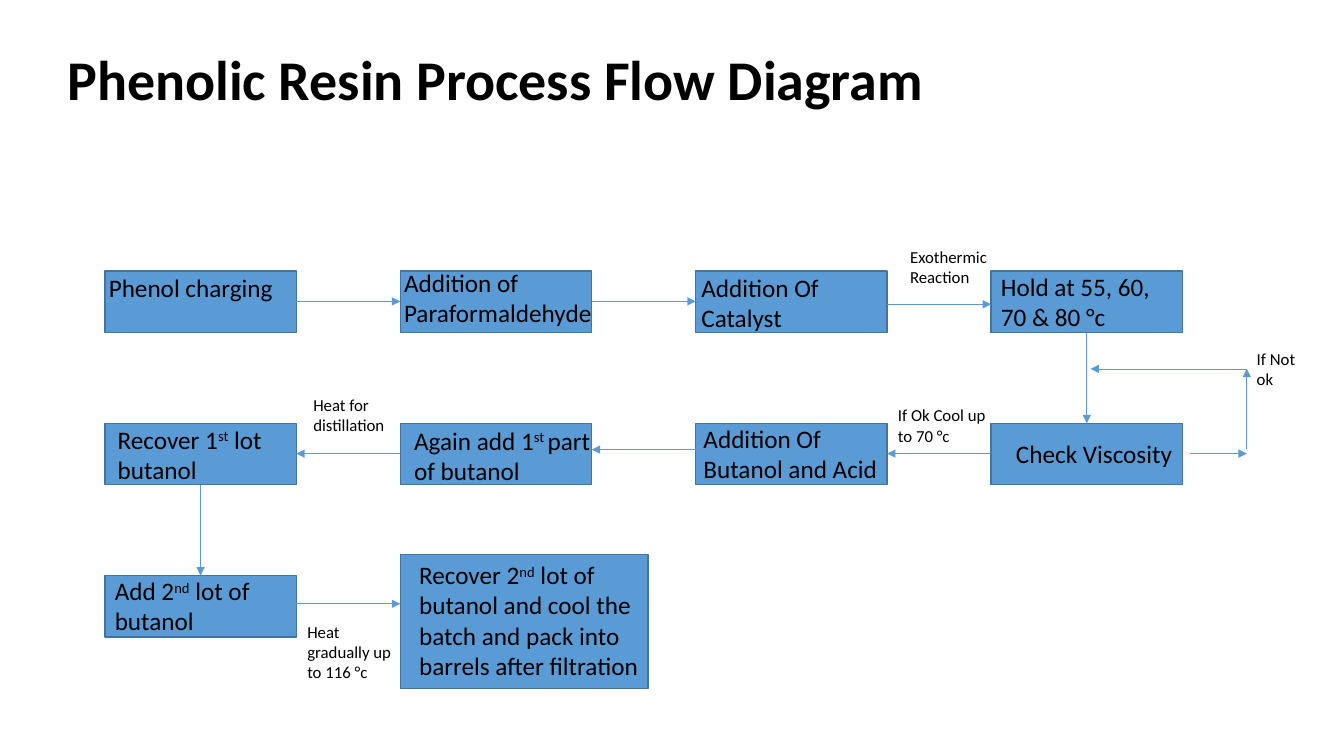
from lxml.etree import SubElement
from pptx import Presentation
from pptx.dml.color import RGBColor
from pptx.enum.shapes import MSO_CONNECTOR, MSO_SHAPE
from pptx.enum.text import MSO_ANCHOR, MSO_AUTO_SIZE, PP_ALIGN
from pptx.oxml.ns import qn
from pptx.util import Pt

HUES = {"box": "5B9BD5", "edge": "43739E", "text": "000000", "halo": "FFFFFF"}
WIDE, HIGH = 136.8, 43.9
COLS = [74.9 + 211 * i for i in range(4)]
ROWS = [193.7 + 108.7 * i for i in range(3)]
ENDS = [x + WIDE for x in COLS]
MIDS = [x + WIDE / 2 for x in COLS]
LOOP = 890.6


def hue(name):
    return RGBColor.from_string(HUES[name])


def write(frame, text, size=18, bold=False, font="Calibri"):
    frame.word_wrap = True
    frame.auto_size = MSO_AUTO_SIZE.SHAPE_TO_FIT_TEXT
    frame.vertical_anchor = MSO_ANCHOR.TOP
    para = frame.paragraphs[0]
    para.alignment = PP_ALIGN.LEFT
    for i, part in enumerate(text.split("^")):
        run = para.add_run()
        run.text = part
        run.font.name = font
        run.font.size = Pt(size)
        run.font.bold = bold
        run.font.color.rgb = hue("text")
        if i % 2:
            run.font._element.set("baseline", "30000")
    return para


class Chart:
    def __init__(self, deck):
        self.slide = deck.slides.add_slide(deck.slide_layouts[5])
        self.shapes = self.slide.shapes

    def title(self, text, x, y, w, h):
        head = self.shapes.title
        head.left, head.top, head.width, head.height = map(Pt, (x, y, w, h))
        para = write(head.text_frame, text, size=40, bold=True)
        for run in para.runs:
            props = run.font._element
            line = SubElement(props, qn("a:ln"), w=str(Pt(0.75)))
            fill = SubElement(line, qn("a:solidFill"))
            SubElement(fill, qn("a:srgbClr"), val=HUES["halo"])
            props.insert(0, line)

    def box(self, x, y, w=WIDE, h=HIGH):
        shape = self.shapes.add_shape(MSO_SHAPE.RECTANGLE, *map(Pt, (x, y, w, h)))
        shape.shadow.inherit = False
        shape.fill.solid()
        shape.fill.fore_color.rgb = hue("box")
        shape.line.color.rgb = hue("edge")
        shape.line.width = Pt(1)

    def arrow(self, *ends):
        link = self.shapes.add_connector(MSO_CONNECTOR.STRAIGHT, *map(Pt, ends))
        link.line.color.rgb = hue("box")
        link.line.width = Pt(0.5)
        props = link._element.spPr
        SubElement(props.find(qn("a:ln")), qn("a:tailEnd"), type="triangle")
        SubElement(props, qn("a:effectLst"))

    def label(self, text, x, y, w, h, **style):
        area = self.shapes.add_textbox(*map(Pt, (x, y, w, h)))
        write(area.text_frame, text, **style)


STEPS = [
    ("Phenol charging", 70.6, 190.8, 142.6, 29),
    ("Addition of Paraformaldehyde", 281.5, 187.2, 159.1, 51),
    ("Addition Of Catalyst", 493.9, 190.8, 148.3, 51),
    ("Hold at 55, 60, 70 & 80 °c", 707.8, 190.1, 142.6, 51),
    ("Check Viscosity", 718.6, 309.6, 142.6, 29),
    ("Addition Of Butanol and Acid", 495.4, 298.8, 142.6, 51),
    ("Again add 1^st ^part of butanol", 288.7, 300.2, 142.6, 51),
    ("Recover 1^st^ lot butanol", 77, 299.5, 144.7, 51),
    ("Add 2^nd^ lot of butanol", 74.9, 407.5, 142.6, 51),
    ("Recover 2^nd^ lot of butanol and cool the batch and pack into "
     "barrels after filtration", 292.3, 396, 173.5, 94.3),
]
NOTES = [
    ("Exothermic Reaction", 643, 172.8, 86.4, 36),
    ("If Ok Cool up to 70 °c", 634.3, 285.8, 85, 51),
    ("If Not ok", LOOP, 245.5, 54, 36),
    ("Heat for distillation", 216.7, 278.6, 71.3, 36),
    ("Heat gradually up to 116 °c", 212.4, 440.6, 78.5, 51),
]
LINKS = [
    (ENDS[0], 215.3, COLS[1], 215.3),
    (ENDS[1], 215.3, COLS[2], 215.3),
    (ENDS[2], 217.4, COLS[3], 217.4),
    (MIDS[3], ROWS[0] + HIGH, MIDS[3], ROWS[1]),
    (COLS[3], 324, ENDS[2], 324),
    (COLS[2], 321.1, ENDS[1], 321.1),
    (COLS[1], 324, ENDS[0], 324),
    (MIDS[0], ROWS[1] + HIGH, MIDS[0], ROWS[2]),
    (ENDS[0], 431.3, COLS[1], 431.3),
    (850.3, 324, LOOP, 324),
    (LOOP, 320.4, LOOP, 263.5),
    (LOOP, 263.5, 779, 263.5),
]


def main():
    deck = Presentation()
    deck.slide_width, deck.slide_height = Pt(960), Pt(540)
    flow = Chart(deck)
    flow.title("Phenolic Resin Process Flow Diagram", 41, 28.1, 648.7, 55.4)
    for y in ROWS[:2]:
        for x in COLS:
            flow.box(x, y)
    flow.box(COLS[0], ROWS[2])
    flow.box(COLS[1], 396, 177.1, 95.8)
    for ends in LINKS:
        flow.arrow(*ends)
    for step in STEPS:
        flow.label(*step)
    for note in NOTES:
        flow.label(*note, size=12)
    deck.save("out.pptx")


if __name__ == "__main__":
    main()
